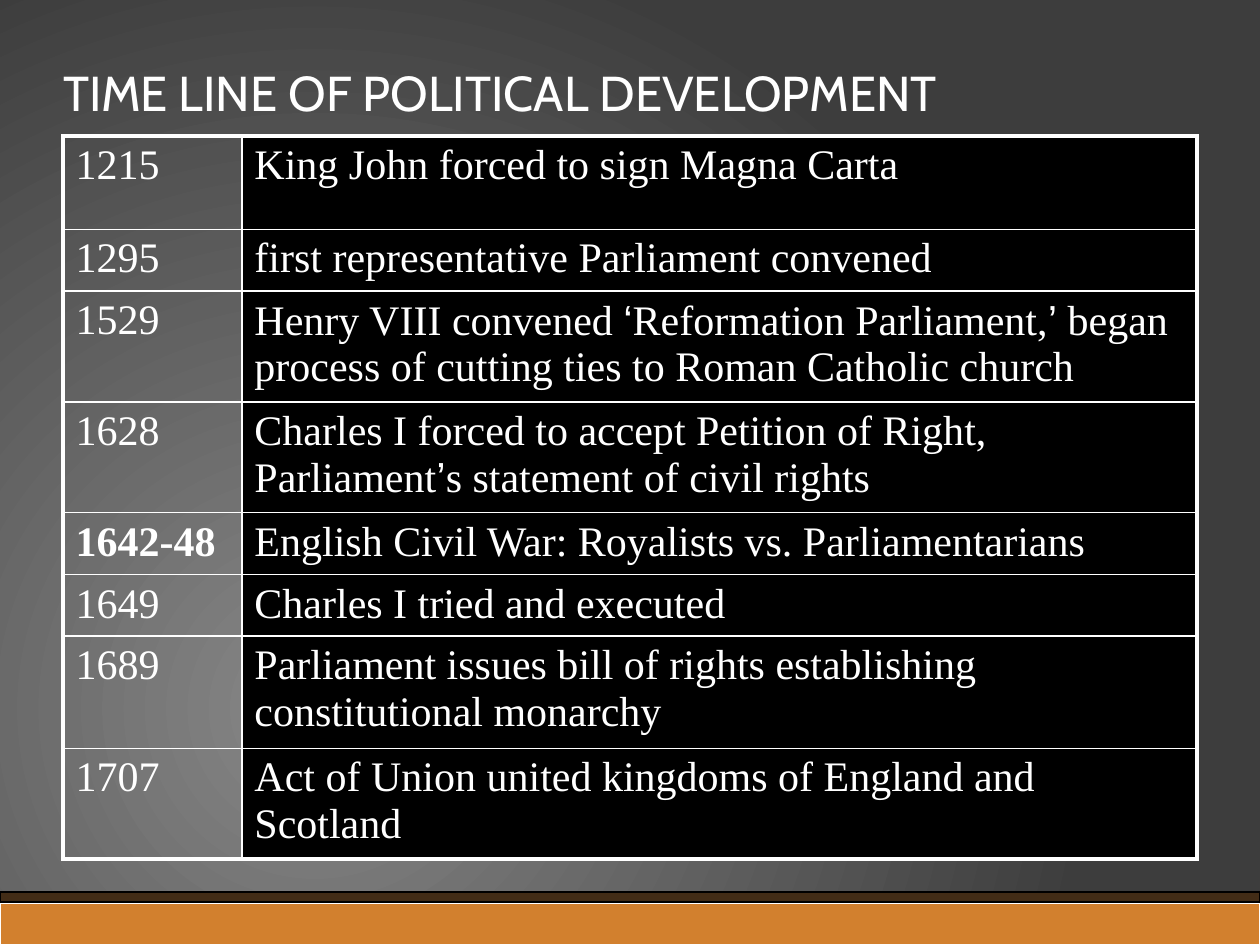
from itertools import groupby

from lxml.etree import SubElement
from pptx import Presentation
from pptx.dml.color import RGBColor
from pptx.enum.shapes import MSO_SHAPE
from pptx.enum.text import MSO_ANCHOR, MSO_AUTO_SIZE, PP_ALIGN
from pptx.oxml.ns import qn
from pptx.util import Inches, Pt

THEME = {
    "text": "FFFFFF", "border": "FFFFFF", "event_fill": "000000",
    "glow": "878787", "backdrop": "3D3D3D",
    "orange": "D2802E", "brown": "422C16", "brown_edge": "000000",
    "title_font": "Cabin", "body_font": "Times New Roman", "quote_font": "Arial",
    "title_size": 28, "body_size": 24, "inner_line": 1, "outer_line": 2.25,
}

TIMELINE = [  # year, event, row height
    ("1215", "King John forced to sign Magna Carta", 0.74),
    ("1295", "first representative Parliament convened", 0.49),
    ("1529", "Henry VIII convened ‘Reformation Parliament,’ began process of "
             "cutting ties to Roman Catholic church", 0.88),
    ("1628", "Charles I forced to accept Petition of Right, Parliament’s "
             "statement of civil rights", 0.88),
    ("1642-48", "English Civil War: Royalists vs. Parliamentarians", 0.49),
    ("1649", "Charles I tried and executed", 0.49),
    ("1689", "Parliament issues bill of rights establishing constitutional "
             "monarchy", 0.89),
    ("1707", "Act of Union united kingdoms of England and Scotland", 0.88),
]


def write(frame, text, *, font, size, bold=False, quote_font=None):
    """Write one left-aligned paragraph, with curly quotes in quote_font."""
    paragraph = frame.paragraphs[0]
    paragraph.alignment = PP_ALIGN.LEFT
    for is_quote, letters in groupby(text, lambda letter: letter in "‘’"):
        run = paragraph.add_run()
        run.text = "".join(letters)
        run.font.name = quote_font if is_quote and quote_font else font
        run.font.size = Pt(size)
        run.font.bold = bold
        run.font.color.rgb = RGBColor.from_string(THEME["text"])


def add_border(cell, side, width):
    line = SubElement(cell._tc.get_or_add_tcPr(), qn(f"a:ln{side}"), w=str(Pt(width)))
    fill = SubElement(line, qn("a:solidFill"))
    SubElement(fill, qn("a:srgbClr"), val=THEME["border"])


prs = Presentation()
prs.slide_width, prs.slide_height = Inches(10), Inches(7.5)
slide = prs.slides.add_slide(prs.slide_layouts[5])

# Background: a glow from the lower left
backdrop = slide.background.fill
backdrop.gradient()
for stop, key in zip(backdrop.gradient_stops, ("glow", "backdrop")):
    stop.color.rgb = RGBColor.from_string(THEME[key])
gradient = next(slide.element.iter(qn("a:gradFill")))
gradient.remove(gradient.find(qn("a:lin")))
glow_shape = SubElement(gradient, qn("a:path"), path="circle")
SubElement(glow_shape, qn("a:fillToRect"), l="50000", t="100000", r="100000", b="50000")

# Title
title = slide.shapes.title
title.left, title.top = Inches(0.5), Inches(0.3)
title.width, title.height = Inches(9), Inches(0.86)
heading = title.text_frame
heading.margin_left = heading.margin_right = 0
heading.vertical_anchor = MSO_ANCHOR.MIDDLE
heading.auto_size = MSO_AUTO_SIZE.NONE
write(heading, "TIME LINE OF POLITICAL DEVELOPMENT",
      font=THEME["title_font"], size=THEME["title_size"])

# Bands along the foot
for top, height, fill, edge in ((7.17, 0.33, "orange", "border"),
                                (7.08, 0.08, "brown", "brown_edge")):
    band = slide.shapes.add_shape(MSO_SHAPE.RECTANGLE, 0, Inches(top),
                                  prs.slide_width, Inches(height))
    band.shadow.inherit = False
    band.fill.solid()
    band.fill.fore_color.rgb = RGBColor.from_string(THEME[fill])
    band.line.color.rgb = RGBColor.from_string(THEME[edge])
    band.line.width = Pt(0.75)

# Timeline table
timeline = slide.shapes.add_table(len(TIMELINE), 2, Inches(0.5), Inches(1.08),
                                  Inches(9), Inches(5.74)).table
timeline.first_row = timeline.horz_banding = False
timeline.columns[0].width, timeline.columns[1].width = Inches(1.42), Inches(7.58)

last_row = len(TIMELINE) - 1
for row, (year, event, height) in enumerate(TIMELINE):
    timeline.rows[row].height = Inches(height)
    for column, text in enumerate((year, event)):
        cell = timeline.cell(row, column)
        write(cell.text_frame, text, font=THEME["body_font"], size=THEME["body_size"],
              bold=text == "1642-48", quote_font=THEME["quote_font"])
        outer_sides = {"L": column == 0, "R": column == 1,
                       "T": row == 0, "B": row == last_row}
        for side, is_outer in outer_sides.items():
            add_border(cell, side, THEME["outer_line" if is_outer else "inner_line"])
        if column == 0:
            cell.fill.background()
        else:
            cell.fill.solid()
            cell.fill.fore_color.rgb = RGBColor.from_string(THEME["event_fill"])

prs.save("out.pptx")
